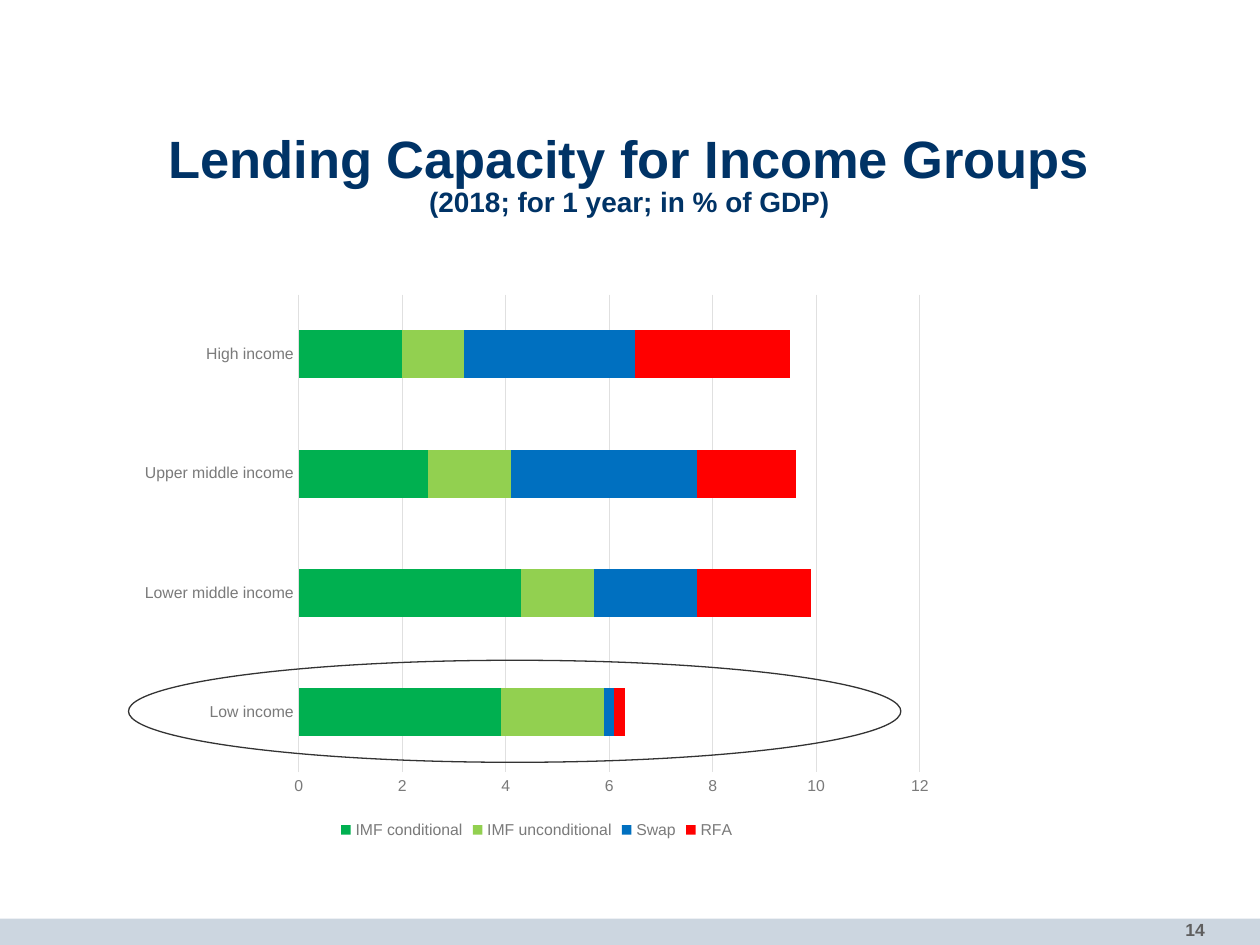
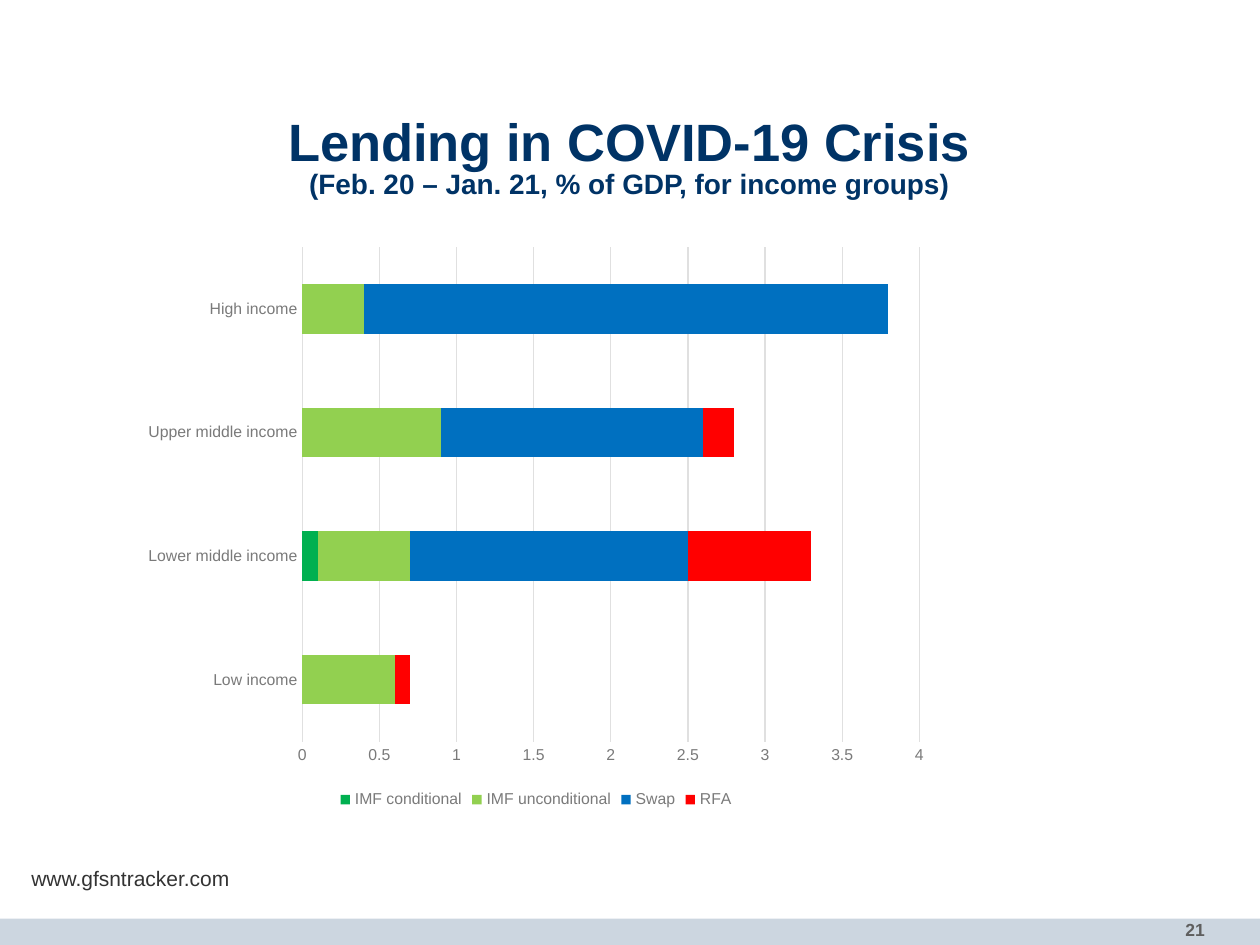
from pptx import Presentation
from pptx.chart.data import CategoryChartData
from pptx.dml.color import RGBColor
from pptx.enum.chart import XL_CHART_TYPE, XL_LEGEND_POSITION, XL_TICK_MARK
from pptx.enum.shapes import MSO_SHAPE
from pptx.enum.text import MSO_ANCHOR, MSO_AUTO_SIZE, PP_ALIGN
from pptx.util import Inches, Pt

NAVY, BAND, GREY = "003366", "CCD6E0", "5F5F5F"
INK, AXIS_TEXT, GRID = "333333", "7A7A7A", "E0E0E0"
INCOME_GROUPS = ["Low income", "Lower middle income", "Upper middle income", "High income"]
SOURCE_COLOURS = {"IMF conditional": "00B050", "IMF unconditional": "92D050",
                  "Swap": "0070C0", "RFA": "FF0000"}

LENDING = [
    dict(number="14", title="Lending Capacity for Income Groups",
         subtitle="(2018; for 1 year; in % of GDP)", title_top=1.17,
         chart_box=(1.02, 2.25, 6.48, 4.45), axis_max=12, axis_step=2,
         shares=[(3.9, 4.3, 2.5, 2), (2, 1.4, 1.6, 1.2),
                 (0.2, 2, 3.6, 3.3), (0.2, 2.2, 1.9, 3)],
         highlight=(1.02, 5.24, 6.13, 0.81), website=None),
    dict(number="21", title="Lending in COVID-19 Crisis",
         subtitle="(Feb. 20 – Jan. 21, % of GDP, for income groups)", title_top=1.03,
         chart_box=(1.05, 1.87, 6.41, 4.59), axis_max=4, axis_step=0.5,
         shares=[(0, 0.1, 0, 0), (0.6, 0.6, 0.9, 0.4),
                 (0, 1.8, 1.7, 3.4), (0.1, 0.8, 0.2, 0)],
         highlight=None, website="www.gfsntracker.com"),
]


def rgb(hex_colour):
    return RGBColor.from_string(hex_colour)


def style(font, size, colour, bold=False):
    font.name, font.size, font.bold = "Arial", Pt(size), bold
    font.color.rgb = rgb(colour)


prs = Presentation()
prs.slide_width, prs.slide_height = Inches(10), Inches(7.5)
title_only = prs.slide_layouts[5]

for page in LENDING:
    slide = prs.slides.add_slide(title_only)
    shapes = slide.shapes

    # Footer band and page number
    band = shapes.add_shape(MSO_SHAPE.RECTANGLE, 0, Inches(7.29), Inches(10), Inches(0.21))
    band.shadow.inherit = False
    band.fill.solid()
    band.fill.fore_color.rgb = rgb(BAND)
    band.line.fill.background()

    number = shapes.add_textbox(Inches(8.32), Inches(7.25), Inches(1.34), Inches(0.26)).text_frame
    number.word_wrap = True
    number.vertical_anchor = MSO_ANCHOR.MIDDLE
    number.text = page["number"]
    number.paragraphs[0].alignment = PP_ALIGN.RIGHT
    style(number.paragraphs[0].runs[0].font, 10, GREY, bold=True)

    # Title with subtitle
    title = shapes.title
    title.left, title.top = Inches(0.27), Inches(page["title_top"])
    title.width, title.height = Inches(9.45), Inches(0.47)
    heading = title.text_frame
    heading.auto_size = MSO_AUTO_SIZE.NONE
    heading.vertical_anchor = MSO_ANCHOR.MIDDLE
    heading.margin_left = heading.margin_right = heading.margin_top = heading.margin_bottom = 0
    heading.text = page["title"] + "\n" + page["subtitle"]
    for paragraph, size in zip(heading.paragraphs, (30, 16)):
        paragraph.alignment = PP_ALIGN.CENTER
        paragraph.line_spacing = 0.85
        style(paragraph.runs[0].font, size, NAVY, bold=True)

    if page["website"]:
        website = shapes.add_textbox(Inches(0.15), Inches(6.82), Inches(1.79), Inches(0.3)).text_frame
        website.word_wrap = False
        website.auto_size = MSO_AUTO_SIZE.SHAPE_TO_FIT_TEXT
        website.text = page["website"]
        style(website.paragraphs[0].runs[0].font, 12, INK)

    # Stacked bars: one series per lending source
    lending = CategoryChartData()
    lending.categories = INCOME_GROUPS
    for source, values in zip(SOURCE_COLOURS, page["shares"]):
        lending.add_series(source, values)
    chart = shapes.add_chart(XL_CHART_TYPE.BAR_STACKED,
                             *map(Inches, page["chart_box"]), lending).chart
    style(chart.font, 10, INK)
    chart.has_title = False
    chart.has_legend = True
    chart.legend.position = XL_LEGEND_POSITION.BOTTOM
    chart.legend.include_in_layout = False
    style(chart.legend.font, 9, AXIS_TEXT)

    bars = chart.plots[0]
    bars.gap_width, bars.overlap = 150, 100
    bars.vary_by_categories = False
    for series, colour in zip(bars.series, SOURCE_COLOURS.values()):
        series.format.fill.solid()
        series.format.fill.fore_color.rgb = rgb(colour)

    groups, percent = chart.category_axis, chart.value_axis
    for axis in (groups, percent):
        axis.major_tick_mark = axis.minor_tick_mark = XL_TICK_MARK.NONE
        style(axis.tick_labels.font, 9, AXIS_TEXT)
    percent.minimum_scale, percent.maximum_scale = 0, page["axis_max"]
    percent.major_unit = page["axis_step"]
    percent.has_major_gridlines = True
    percent.format.line.fill.background()
    for line in (groups.format.line, percent.major_gridlines.format.line):
        line.color.rgb = rgb(GRID)
        line.width = Pt(0.75)

    if page["highlight"]:
        low_income_ring = shapes.add_shape(MSO_SHAPE.OVAL, *map(Inches, page["highlight"]))
        low_income_ring.shadow.inherit = False
        low_income_ring.fill.background()
        low_income_ring.line.color.rgb = rgb(INK)
        low_income_ring.line.width = Pt(0.75)

prs.save("out.pptx")
